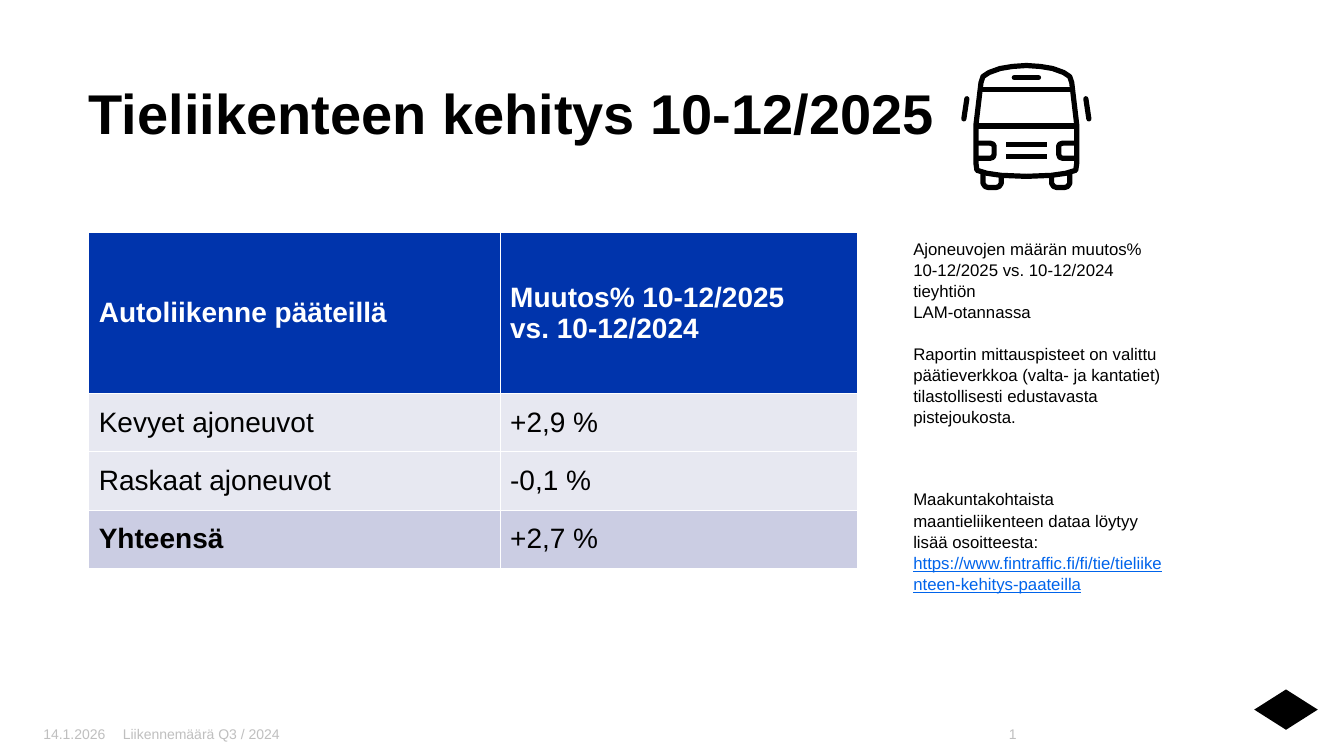
from typing import Any, NamedTuple

from lxml.etree import SubElement as Sub
from pptx import Presentation as Deck
from pptx.dml.color import RGBColor as Rgb
from pptx.enum.shapes import MSO_CONNECTOR as Conn, MSO_SHAPE as Kind
from pptx.enum.text import MSO_ANCHOR as Anchor, PP_ALIGN as Align
from pptx.oxml.ns import qn
from pptx.util import Emu, Inches, Pt

WIDE, HIGH = Inches(13.33), Inches(7.5)
COLS, ROWS = 1333, 750
MID = 1018
STROKE = Pt(3.7)
HUES = {"ink": "000000", "paper": "FFFFFF", "head": "0034AC", "row": "E7E8F1",
        "sum": "CBCDE3", "foot": "BFBFBF", "link": "0064EB"}


class Run(NamedTuple):
    text: str
    hue: str = "ink"
    form: dict[str, Any] = {}


class Para(NamedTuple):
    runs: list[Run]
    form: dict[str, Any] = {}


class Box(NamedTuple):
    area: tuple[int, int, int, int]
    size: int
    paras: list[Para]
    pads: tuple[int, int, int, int]
    anchor: Any = Anchor.TOP


class Bar(NamedTuple):
    half: int
    row: int
    cap: str = "flat"


class Path(NamedTuple):
    spots: list[tuple[int, int]]
    whole: bool = False


class Row(NamedTuple):
    cells: tuple[str, str]
    rise: int
    fill: str
    hue: str = "ink"
    bold: tuple[bool, bool] = (False, False)


FOOT = {"size": 10, "anchor": Anchor.MIDDLE}
SIDE = {"line_spacing": 1.05}
BOXES = [
    Box((88, 71, 1150, 122), 40,
        [Para([Run("Tieliikenteen kehitys 10-12/2025", form={"bold": True})],
              {"line_spacing": 1.1})], (0, 0, 10, 5)),
    Box((43, 715, 90, 26), paras=[Para([Run("14.1.2026", "foot")])],
        pads=(0, 5, 10, 5), **FOOT),
    Box((112, 715, 798, 26), paras=[Para([Run("Liikennemäärä Q3 / 2024", "foot")])],
        pads=(10, 5, 0, 5), **FOOT),
    Box((914, 715, 104, 26),
        paras=[Para([Run("1", "foot")], {"alignment": Align.RIGHT})],
        pads=(0, 5, 10, 5), **FOOT),
    Box((896, 231, 270, 394), 12, [
        Para([Run("Ajoneuvojen määrän muutos%")], SIDE),
        Para([Run("10-12/2025 vs. 10-12/2024 tieyhtiön")], SIDE),
        Para([Run("LAM-otannassa")], SIDE),
        Para([Run("Raportin mittauspisteet on valittu päätieverkkoa (valta- ja "
                  "kantatiet) tilastollisesti edustavasta pistejoukosta.")],
             SIDE | {"space_before": Pt(14.5)}),
        Para([Run("Maakuntakohtaista maantieliikenteen dataa löytyy lisää osoitteesta: "),
              Run("https://www.fintraffic.fi/fi/tie/tieliikenteen-kehitys-paateilla",
                  "link", {"underline": True})],
             SIDE | {"space_before": Pt(43.5)}),
    ], (10, 5, 10, 5)),
]
SPANS = (408, 354)
LINES = [
    Row(("Autoliikenne pääteillä", "Muutos% 10-12/2025|vs. 10-12/2024"),
        159, "head", "paper", (True, True)),
    Row(("Kevyet ajoneuvot", "+2,9 %"), 58, "row"),
    Row(("Raskaat ajoneuvot", "-0,1 %"), 58, "row"),
    Row(("Yhteensä", "+2,7 %"), 58, "sum", bold=(True, False)),
]
BARS = [Bar(12, 77, "rnd"), Bar(46, 89), Bar(49, 125), Bar(20, 143), Bar(20, 155)]
BODY = Path([(0, 65), (14, 66), (26, 68), (37, 72), (43, 76), (45, 82), (50, 124),
             (50, 162), (49, 169), (39, 172), (25, 174), (0, 175)], True)
PARTS = [
    Path([(59, 98), (62, 118)]),
    Path([(25, 173), (25, 182), (27, 185), (30, 186), (38, 186), (41, 185),
          (43, 182), (43, 171)]),
    Path([(50, 142), (36, 142), (33, 143), (32, 145), (32, 153), (33, 156),
          (36, 157), (50, 157)]),
]


def across(cols: float) -> Emu:
    """Turn grid columns into a length."""
    return Emu(round(WIDE * cols / COLS))


def down(rows: float) -> Emu:
    """Turn grid rows into a length."""
    return Emu(round(HIGH * rows / ROWS))


def place(area: tuple[int, int, int, int]) -> tuple[Emu, Emu, Emu, Emu]:
    """Turn a grid area into left, top, width and height."""
    left, top, wide, high = area
    return across(left), down(top), across(wide), down(high)


def tint(hue: str) -> Rgb:
    """Look up a colour."""
    return Rgb.from_string(HUES[hue])


def apply(item: Any, form: dict[str, Any]) -> None:
    """Set each format value on an item."""
    for name, value in form.items():
        setattr(item, name, value)


def write(para: Any, run: Run, size: int) -> None:
    """Add a styled run to a paragraph."""
    part = para.add_run()
    part.text = run.text
    apply(part.font, {"name": "Arial", "size": Pt(size)} | run.form)
    part.font.color.rgb = tint(run.hue)


def draw_box(slide: Any, box: Box) -> None:
    """Draw a text box."""
    frame = slide.shapes.add_textbox(*place(box.area)).text_frame
    left, top, right, base = box.pads
    apply(frame, {"word_wrap": True, "vertical_anchor": box.anchor,
                  "margin_left": across(left), "margin_top": down(top),
                  "margin_right": across(right), "margin_bottom": down(base)})
    for num, item in enumerate(box.paras):
        para = frame.add_paragraph() if num else frame.paragraphs[0]
        apply(para, item.form)
        for run in item.runs:
            write(para, run, box.size)


def edge(cell: Any) -> None:
    """Give a cell thin white borders."""
    props = cell._tc.get_or_add_tcPr()
    for num, side in enumerate(("lnL", "lnR", "lnT", "lnB")):
        line = props.makeelement(qn(f"a:{side}"), {"w": str(Pt(0.6))})
        fill = Sub(line, qn("a:solidFill"))
        Sub(fill, qn("a:srgbClr"), val=HUES["paper"])
        props.insert(num, line)


def draw_table(slide: Any) -> None:
    """Draw the table of traffic changes."""
    area = (88, 231, sum(SPANS), sum(row.rise for row in LINES))
    table = slide.shapes.add_table(len(LINES), len(SPANS), *place(area)).table
    for col, span in zip(table.columns, SPANS):
        col.width = across(span)
    for line, row in zip(table.rows, LINES):
        line.height = down(row.rise)
        for cell, text, bold in zip(line.cells, row.cells, row.bold):
            cell.fill.solid()
            cell.fill.fore_color.rgb = tint(row.fill)
            cell.vertical_anchor = Anchor.MIDDLE
            edge(cell)
            para = cell.text_frame.paragraphs[0]
            for num, piece in enumerate(text.split("|")):
                if num:
                    para.add_line_break()
                write(para, Run(piece, row.hue, {"bold": bold}), 20)


def ink(shape: Any, cap: str) -> None:
    """Give a shape the thick black stroke of the bus."""
    shape.line.color.rgb = tint("ink")
    shape.line.width = STROKE
    line = shape.line._get_or_add_ln()
    line.set("cap", cap)
    Sub(line, qn("a:round"))


def trace(slide: Any, spots: list[tuple[int, int]], whole: bool) -> None:
    """Draw one outline of the bus."""
    points = [(across(MID + col), down(row)) for col, row in spots]
    pen = slide.shapes.build_freeform(*points[0])
    pen.add_line_segments(points[1:], close=whole)
    shape = pen.convert_to_shape()
    shape.shadow.inherit = False
    shape.fill.background()
    ink(shape, "flat" if len(spots) > 2 else "rnd")


def draw_bus(slide: Any) -> None:
    """Draw the bus from mirrored halves and level bars."""
    other = [(-col, row) for col, row in BODY.spots[-2:0:-1]]
    trace(slide, BODY.spots + other, BODY.whole)
    for part in PARTS:
        for sign in (-1, 1):
            trace(slide, [(sign * col, row) for col, row in part.spots], part.whole)
    for bar in BARS:
        line = slide.shapes.add_connector(
            Conn.STRAIGHT, across(MID - bar.half), down(bar.row),
            across(MID + bar.half), down(bar.row))
        ink(line, bar.cap)
        Sub(line._element.spPr, qn("a:effectLst"))


def draw_mark(slide: Any) -> None:
    """Draw the plain corner mark."""
    mark = slide.shapes.add_shape(Kind.DIAMOND, *place((1244, 684, 63, 40)))
    mark.shadow.inherit = False
    mark.fill.solid()
    mark.fill.fore_color.rgb = tint("ink")
    mark.line.fill.background()


def main() -> None:
    """Build and save the slide."""
    deck = Deck()
    apply(deck, {"slide_width": WIDE, "slide_height": HIGH})
    slide = deck.slides.add_slide(deck.slide_layouts[6])
    draw_mark(slide)
    draw_table(slide)
    for box in BOXES:
        draw_box(slide, box)
    draw_bus(slide)
    deck.save("out.pptx")


if __name__ == "__main__":
    main()
